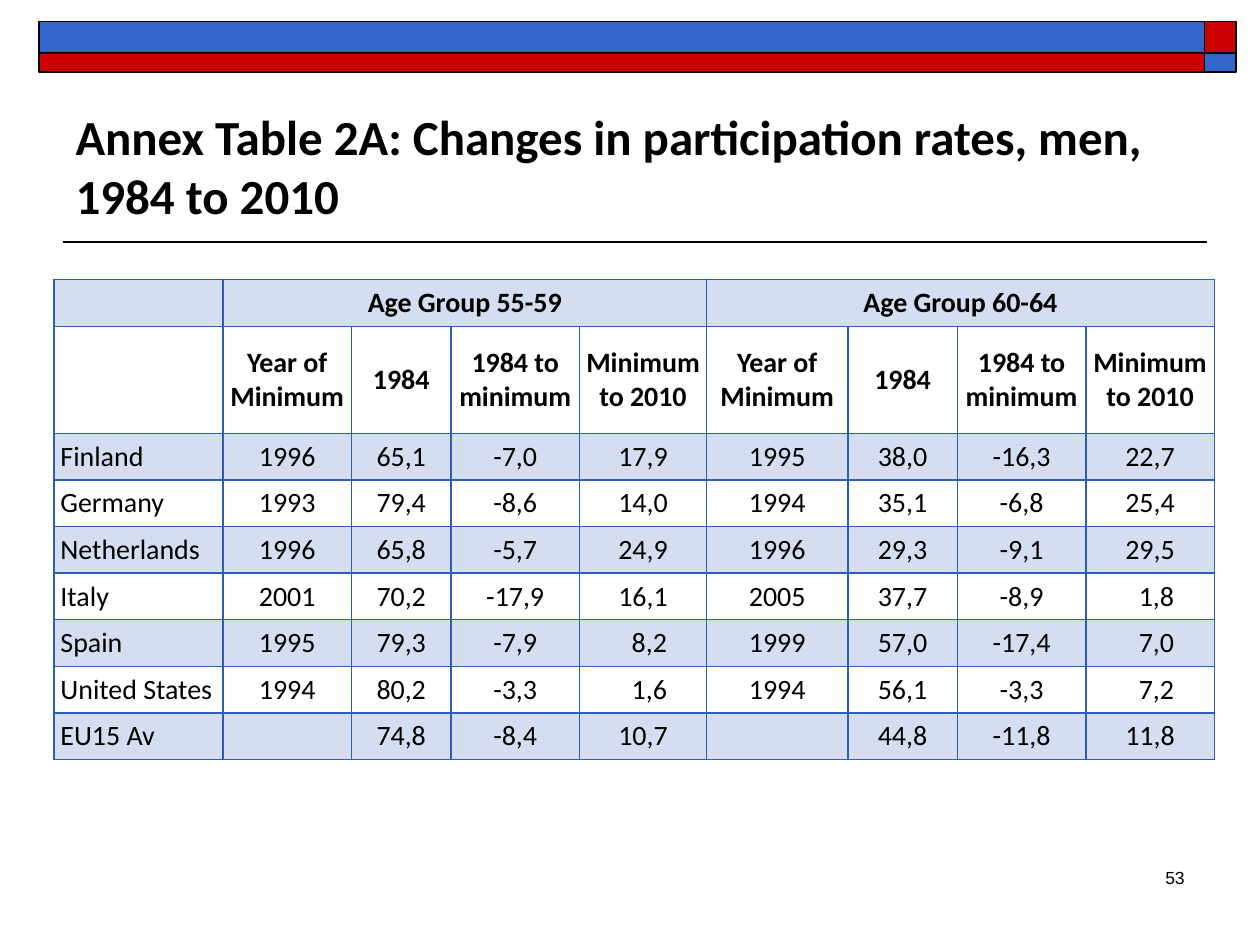
from lxml import etree
from pptx import Presentation
from pptx.dml.color import RGBColor
from pptx.enum.shapes import MSO_CONNECTOR, MSO_SHAPE
from pptx.enum.text import MSO_ANCHOR, MSO_AUTO_SIZE, PP_ALIGN
from pptx.oxml.ns import qn
from pptx.util import Inches, Pt

RECTANGLE = MSO_SHAPE.RECTANGLE
STRAIGHT = MSO_CONNECTOR.STRAIGHT
MIDDLE, TOP, BOTTOM = MSO_ANCHOR.MIDDLE, MSO_ANCHOR.TOP, MSO_ANCHOR.BOTTOM
LEFT, CENTER, RIGHT = PP_ALIGN.LEFT, PP_ALIGN.CENTER, PP_ALIGN.RIGHT
NO_AUTOFIT = MSO_AUTO_SIZE.NONE

BLACK, RED, BLUE, TABLE_BLUE = "000000", "CC0000", "3366CC", "2D5CB9"

COLUMN_WIDTHS = [1.34, 1.02, 0.79, 1.02, 1.01, 1.12, 0.87, 1.02, 1.02]
ROW_HEIGHT, MEASURE_ROW_HEIGHT = 0.37, 0.85
SIDE_INSET, MEASURE_INSET, SHORT_VALUE_INSET = 0.05, 0.04, 0.15
AGE_GROUPS = ["Age Group 55-59", "Age Group 60-64"]
MEASURES = ["Year of Minimum", "1984", "1984 to minimum", "Minimum to 2010"]
COUNTRIES = [
    ["Finland", "1996", "65,1", "-7,0", "17,9", "1995", "38,0", "-16,3", "22,7"],
    ["Germany", "1993", "79,4", "-8,6", "14,0", "1994", "35,1", "-6,8", "25,4"],
    ["Netherlands", "1996", "65,8", "-5,7", "24,9", "1996", "29,3", "-9,1", "29,5"],
    ["Italy", "2001", "70,2", "-17,9", "16,1", "2005", "37,7", "-8,9", "1,8"],
    ["Spain", "1995", "79,3", "-7,9", "8,2", "1999", "57,0", "-17,4", "7,0"],
    ["United States", "1994", "80,2", "-3,3", "1,6", "1994", "56,1", "-3,3", "7,2"],
    ["EU15 Av", "", "74,8", "-8,4", "10,7", "", "44,8", "-11,8", "11,8"],
]


def color(hex_value):
    """Turn a hex string into a colour."""
    return RGBColor.from_string(hex_value)


def write(frame, text, size, align, font="Calibri", bold=False):
    """Put one formatted paragraph into a text frame."""
    frame.text = text
    paragraph = frame.paragraphs[0]
    paragraph.alignment = align
    for run in paragraph.runs:
        run.font.name = font
        run.font.size = Pt(size)
        run.font.bold = bold
        run.font.color.rgb = color(BLACK)
    return paragraph


def add_bar(slide, left, top, width, height, fill):
    """Add one outlined block of the header band."""
    bar = slide.shapes.add_shape(
        RECTANGLE, Inches(left), Inches(top), Inches(width), Inches(height))
    bar.shadow.inherit = False
    bar.fill.solid()
    bar.fill.fore_color.rgb = color(fill)
    bar.line.color.rgb = color(BLACK)
    bar.line.width = Pt(1)


def add_header_band(slide):
    """Add the two-row band, whose colours swap in the end blocks."""
    for top, height, main, end in [(0.17, 0.25, BLUE, RED), (0.42, 0.15, RED, BLUE)]:
        add_bar(slide, 0.31, top, 9.25, height, main)
        add_bar(slide, 9.56, top, 0.25, height, end)


def add_title_rule(slide):
    """Add the thin line under the title."""
    rule = slide.shapes.add_connector(
        STRAIGHT, Inches(0.5), Inches(1.92), Inches(9.58), Inches(1.92))
    rule.line.color.rgb = color(BLACK)
    rule.line.width = Pt(1)
    etree.SubElement(rule._element.spPr, qn("a:effectLst"))


def fill_title(slide, text):
    """Place and format the title placeholder."""
    title = slide.shapes.title
    title.left, title.top = Inches(0.5), Inches(0.58)
    title.width, title.height = Inches(9), Inches(1.25)
    title.text_frame.vertical_anchor = BOTTOM
    title.text_frame.auto_size = NO_AUTOFIT
    write(title.text_frame, text, 28, LEFT, bold=True)


def add_page_number(slide, number):
    """Add the page number at the lower right."""
    box = slide.shapes.add_textbox(
        Inches(7.42), Inches(6.83), Inches(2.08), Inches(0.5))
    box.text_frame.word_wrap = True
    box.text_frame.vertical_anchor = TOP
    write(box.text_frame, number, 10, RIGHT, font="Arial")


def style_cell(cell, shaded, inset):
    """Set the insets, tint and borders of a table cell."""
    cell.vertical_anchor = MIDDLE
    cell.margin_left = cell.margin_right = Inches(inset)
    cell.margin_top = cell.margin_bottom = 0
    properties = cell._tc.get_or_add_tcPr()
    if shaded:
        cell.fill.solid()
        cell.fill.fore_color.rgb = color(TABLE_BLUE)
        tint = properties.find(".//" + qn("a:srgbClr"))
        etree.SubElement(tint, qn("a:alpha"), val="20000")
    else:
        cell.fill.background()
    for position, side in enumerate(["lnL", "lnR", "lnT", "lnB"]):
        border = etree.Element(qn("a:" + side), w=str(Pt(1)))
        solid = etree.SubElement(border, qn("a:solidFill"))
        etree.SubElement(solid, qn("a:srgbClr"), val=TABLE_BLUE)
        properties.insert(position, border)


def add_rates_table(slide):
    """Add the participation table with its two header rows."""
    group_row = [""]
    for group in AGE_GROUPS:
        group_row += [group] + [""] * (len(MEASURES) - 1)
    rows = [group_row, [""] + MEASURES * len(AGE_GROUPS)] + COUNTRIES
    heights = [ROW_HEIGHT, MEASURE_ROW_HEIGHT] + [ROW_HEIGHT] * len(COUNTRIES)
    table = slide.shapes.add_table(
        len(rows), len(COLUMN_WIDTHS), Inches(0.43), Inches(2.22),
        Inches(sum(COLUMN_WIDTHS)), Inches(sum(heights))).table
    table.first_row = table.horz_banding = False
    for column, width in zip(table.columns, COLUMN_WIDTHS):
        column.width = Inches(width)
    for row, height in zip(table.rows, heights):
        row.height = Inches(height)

    for row_index, row in enumerate(rows):
        is_header = row_index < 2
        inset = MEASURE_INSET if row_index == 1 else SIDE_INSET
        for column_index, text in enumerate(row):
            cell = table.cell(row_index, column_index)
            style_cell(cell, row_index % 2 == 0, inset)
            align = CENTER if column_index else LEFT
            paragraph = write(cell.text_frame, text, 16, align, bold=is_header)
            if row_index == 0 and text:
                paragraph.space_after = Pt(2)
            if len(text) == 3:
                cell.margin_left = Inches(SHORT_VALUE_INSET)
    for group_index in range(len(AGE_GROUPS)):
        first = 1 + group_index * len(MEASURES)
        table.cell(0, first).merge(table.cell(0, first + len(MEASURES) - 1))


def main():
    """Build and save the slide."""
    presentation = Presentation()
    presentation.slide_width = Inches(10)
    presentation.slide_height = Inches(7.5)
    slide = presentation.slides.add_slide(presentation.slide_layouts[5])
    add_title_rule(slide)
    add_header_band(slide)
    add_page_number(slide, "53")
    fill_title(slide, "Annex Table 2A: Changes in participation rates, men, 1984 to 2010")
    add_rates_table(slide)
    presentation.save("out.pptx")


if __name__ == "__main__":
    main()
